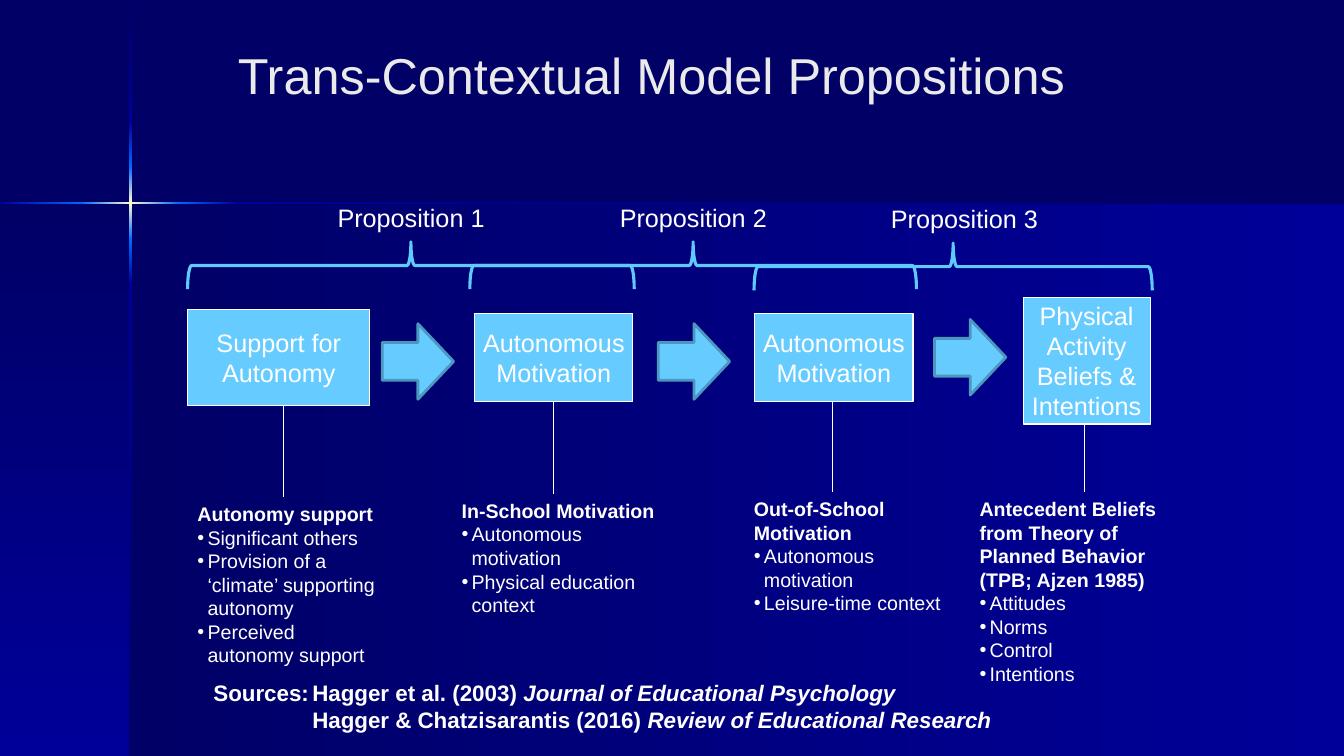
from itertools import pairwise

from lxml import etree
from pptx import Presentation
from pptx import util as u
from pptx.dml.color import RGBColor
from pptx.enum import shapes, text
from pptx.oxml import ns

NIGHT = RGBColor(0x00, 0x00, 0x66)
ROYAL = RGBColor(0x00, 0x00, 0x99)
AZURE = RGBColor(0x00, 0x66, 0xFF)
CREAM = RGBColor(0xFF, 0xFF, 0xCC)
SKY = RGBColor(0x66, 0xCC, 0xFF)
SKY_EDGE = RGBColor(0x4B, 0x97, 0xBD)
BRACE = RGBColor(0x60, 0xC9, 0xFD)
WHITE = RGBColor(0xFF, 0xFF, 0xFF)
TITLE = RGBColor(0xEA, 0xEA, 0xEA)

FONT = "Arial"
WIDTH, HEIGHT = 960, 540
HORIZON = 145.5
MARGIN = 93

# Positions along each beam of the star, with the colour reached there
VERTICAL_BEAM = [(0.7, NIGHT), (87, ROYAL), (119, AZURE), (145, CREAM),
                 (171.5, AZURE), (203, ROYAL), (HEIGHT, NIGHT)]
HORIZONTAL_BEAM = [(0, ROYAL), (58.5, AZURE), (93.25, CREAM),
                   (128, AZURE), (170, ROYAL), (WIDTH, NIGHT)]

# Box, its lines, the x of its stem, the box of its notes, heading, bullets
STAGES = [
    ((134, 221, 130.3, 68.4), ["Support for", "Autonomy"],
     202.3, (134, 355, 148.3, 126), "Autonomy support",
     ["Significant others", "Provision of a ‘climate’ supporting autonomy",
      "Perceived autonomy support"]),
    ((339.2, 224, 113, 62.6), ["Autonomous", "Motivation"],
     395.3, (322.6, 352.8, 157.7, 92), "In-School Motivation",
     ["Autonomous motivation", "Physical education context"]),
    ((539.2, 224, 113, 62.6), ["Autonomous", "Motivation"],
     594.7, (531.4, 351.4, 157.7, 92), "Out-of-School Motivation",
     ["Autonomous motivation", "Leisure-time context"]),
    ((730.8, 212.2, 90.7, 90.7),
     ["Physical", "Activity", "Beliefs &", "Intentions"],
     774.7, (692.6, 351.4, 157.7, 143),
     "Antecedent Beliefs from Theory of Planned Behavior (TPB; Ajzen 1985)",
     ["Attitudes", "Norms", "Control", "Intentions"]),
]
ARROWS = [(273, 231.2), (470.2, 231.2), (667.5, 228.2)]
# Brace box and left edge of its label
PROPOSITIONS = [((134, 172.8, 319, 33.8), 234),
                ((335.6, 172.8, 319, 33.8), 435.6),
                ((538.6, 173.6, 284.4, 33.8), 629.3)]


def points(*lengths):
    return [u.Pt(length) for length in lengths]


def add_shape(slide, kind, box, fill=None, line=None, line_width=0.75):
    shape = slide.shapes.add_shape(kind, *points(*box))
    shape.shadow.inherit = False
    if fill is None:
        shape.fill.background()
    else:
        shape.fill.solid()
        shape.fill.fore_color.rgb = fill
    if line is None:
        shape.line.fill.background()
    else:
        shape.line.color.rgb = line
        shape.line.width = u.Pt(line_width)
    return shape


def add_run(paragraph, words, size, bold=False, italic=False, colour=WHITE):
    run = paragraph.add_run()
    run.text = words
    run.font.name = FONT
    run.font.size = u.Pt(size)
    run.font.bold = bold
    run.font.italic = italic
    run.font.color.rgb = colour


def add_text_box(slide, box, wrap=True, grow=True):
    frame = slide.shapes.add_textbox(*points(*box)).text_frame
    frame.word_wrap = wrap
    if grow:
        frame.auto_size = text.MSO_AUTO_SIZE.SHAPE_TO_FIT_TEXT
    return frame


def next_paragraph(frame):
    """Return the first paragraph while it is empty, else a new one."""
    first = frame.paragraphs[0]
    return frame.add_paragraph() if first.runs else first


def set_bullet(paragraph):
    properties = paragraph._p.get_or_add_pPr()
    properties.set("marL", str(u.Pt(7.2)))
    properties.set("indent", str(-u.Pt(7.2)))
    etree.SubElement(properties, ns.qn("a:buFont"), typeface=FONT)
    etree.SubElement(properties, ns.qn("a:buChar"), char="•")


def set_tab(paragraph, position):
    tabs = etree.SubElement(paragraph._p.get_or_add_pPr(), ns.qn("a:tabLst"))
    etree.SubElement(tabs, ns.qn("a:tab"), pos=str(u.Pt(position)), algn="l")


def add_gradient(slide, box, start, end, downward):
    shape = add_shape(slide, shapes.MSO_SHAPE.RECTANGLE, box)
    shape.fill.gradient()
    shape.fill.gradient_angle = 270 if downward else 0
    for stop, (position, colour) in zip(shape.fill.gradient_stops,
                                        [(0, start), (1, end)]):
        stop.position = position
        stop.color.rgb = colour


def add_backdrop(slide):
    slide.background.fill.solid()
    slide.background.fill.fore_color.rgb = NIGHT
    depth = HEIGHT - HORIZON
    add_gradient(slide, (MARGIN, HORIZON, WIDTH - MARGIN, depth),
                 NIGHT, ROYAL, False)
    add_gradient(slide, (0, HORIZON, MARGIN, depth), NIGHT, ROYAL, True)
    for (top, start), (bottom, end) in pairwise(VERTICAL_BEAM):
        add_gradient(slide, (92.2, top, 2, bottom - top), start, end, True)
    for (left, start), (right, end) in pairwise(HORIZONTAL_BEAM):
        add_gradient(slide, (left, 144.5, right - left, 1.6),
                     start, end, False)


def add_title(slide, box):
    title = slide.shapes.title
    title.left, title.top, title.width, title.height = points(*box)
    frame = title.text_frame
    frame.auto_size = text.MSO_AUTO_SIZE.NONE
    frame.vertical_anchor = text.MSO_ANCHOR.MIDDLE
    paragraph = frame.paragraphs[0]
    paragraph.alignment = text.PP_ALIGN.LEFT
    add_run(paragraph, "Trans-Contextual Model Propositions", 36, colour=TITLE)


def add_stage(slide, box, lines, stem_x, notes_box, heading, bullets):
    """Draw a box with a stem leading down to its notes."""
    shape = add_shape(slide, shapes.MSO_SHAPE.RECTANGLE, box, SKY, WHITE)
    frame = shape.text_frame
    frame.word_wrap = False
    frame.vertical_anchor = text.MSO_ANCHOR.MIDDLE
    for line in lines:
        paragraph = next_paragraph(frame)
        paragraph.alignment = text.PP_ALIGN.CENTER
        add_run(paragraph, line, 18)

    stem = slide.shapes.add_connector(
        shapes.MSO_CONNECTOR.STRAIGHT,
        *points(stem_x, box[1] + box[3], stem_x, notes_box[1]))
    stem.line.color.rgb = WHITE
    stem.line.width = u.Pt(0.75)
    etree.SubElement(stem._element.spPr, ns.qn("a:effectLst"))

    notes = add_text_box(slide, notes_box)
    add_run(next_paragraph(notes), heading, 14, bold=True)
    for bullet in bullets:
        paragraph = next_paragraph(notes)
        set_bullet(paragraph)
        add_run(paragraph, bullet, 14)


def add_proposition(slide, box, label_left, label):
    """Draw a brace, pointing up, across the box with its label above."""
    left, top, width, height = box
    upright = (left + (width - height) / 2, top + (height - width) / 2,
               height, width)
    brace = add_shape(slide, shapes.MSO_SHAPE.LEFT_BRACE, upright,
                      line=BRACE, line_width=2.25)
    brace.rotation = 90
    frame = add_text_box(slide, (label_left, top - 31.7, 120, 29), wrap=False)
    add_run(frame.paragraphs[0], label, 18)


def add_sources(slide, box):
    frame = add_text_box(slide, box, grow=False)
    for citation, journal in [
            ("Sources:\tHagger et al. (2003) ",
             "Journal of Educational Psychology"),
            ("\tHagger & Chatzisarantis (2016) ",
             "Review of Educational Research")]:
        paragraph = next_paragraph(frame)
        set_tab(paragraph, 70.6)
        add_run(paragraph, citation, 16, bold=True)
        add_run(paragraph, journal, 16, bold=True, italic=True)


def main():
    presentation = Presentation()
    presentation.slide_width, presentation.slide_height = points(WIDTH, HEIGHT)
    slide = presentation.slides.add_slide(presentation.slide_layouts[5])
    add_backdrop(slide)
    add_title(slide, (162.7, 26, 612, 54))
    add_sources(slide, (145.4, 481.7, 686.2, 33))
    for stage in STAGES:
        add_stage(slide, *stage)
    for left, top in ARROWS:
        add_shape(slide, shapes.MSO_SHAPE.RIGHT_ARROW, (left, top, 51, 54),
                  SKY, SKY_EDGE, 2)
    for number, (box, label_left) in enumerate(PROPOSITIONS, 1):
        add_proposition(slide, box, label_left, f"Proposition {number}")
    presentation.save("out.pptx")


if __name__ == "__main__":
    main()
